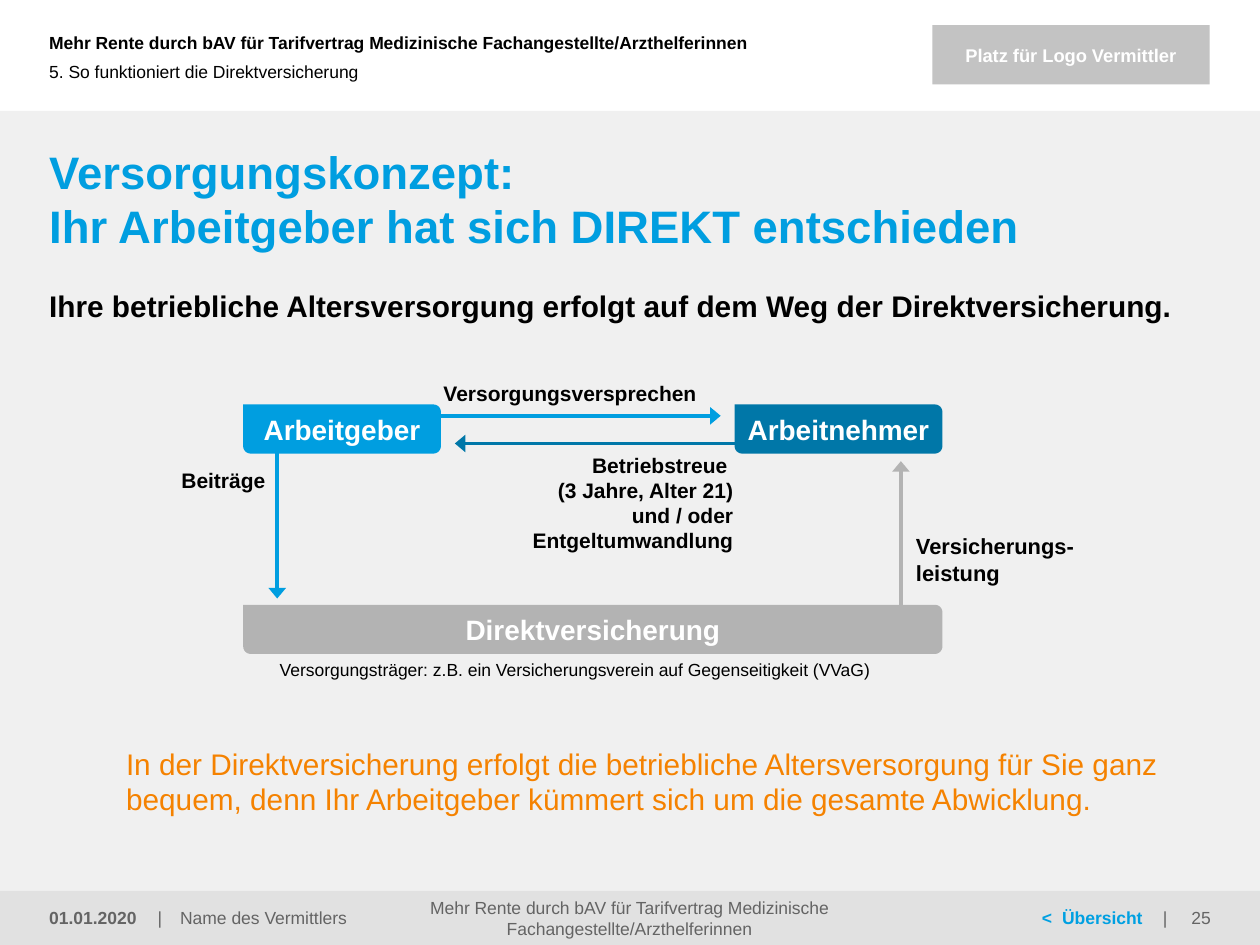
import copy
import math
from dataclasses import dataclass, field

import lxml.etree
import pptx
import pptx.dml.color
import pptx.enum.shapes
import pptx.enum.text
import pptx.oxml.ns
import pptx.util

Inches = pptx.util.Inches
Pt = pptx.util.Pt
qn = pptx.oxml.ns.qn
ALIGN = pptx.enum.text.PP_ALIGN
ANCHOR = pptx.enum.text.MSO_ANCHOR
RECTANGLE = pptx.enum.shapes.MSO_SHAPE.RECTANGLE


@dataclass(frozen=True)
class Theme:
    font: str = "Arial"
    black: str = "000000"
    white: str = "FFFFFF"
    panel: str = "F0F0F0"
    footer: str = "E1E1E1"
    footer_text: str = "646464"
    logo: str = "C3C3C3"
    blue: str = "009EE0"
    link: str = "00A0E1"
    dark_blue: str = "0077A8"
    gray: str = "B3B3B3"
    orange: str = "F58200"
    title: float = 26
    body: float = 17
    node: float = 16
    benefit: float = 12.5
    label: float = 12
    logo_text: float = 10.5
    small: float = 10


THEME = Theme()


@dataclass(frozen=True)
class Style:
    size: float
    color: str = THEME.black
    bold: bool = False
    align: ALIGN = ALIGN.LEFT
    anchor: ANCHOR = ANCHOR.TOP
    insets: tuple[float, float, float, float] = (0, 0, 0, 0)
    wrap: bool = True
    tabs: tuple[float, ...] = ()


@dataclass(frozen=True)
class Label:
    text: str
    box: tuple[float, float, float, float]
    style: Style = field(default_factory=lambda: Style(THEME.label, bold=True, wrap=False))


@dataclass(frozen=True)
class Node:
    text: str
    box: tuple[float, float, float, float]
    color: str


@dataclass(frozen=True)
class Arrow:
    start: tuple[float, float]
    end: tuple[float, float]
    color: str


def rgb(value: str) -> pptx.dml.color.RGBColor:
    return pptx.dml.color.RGBColor.from_string(value)


def assign(target, values: dict) -> None:
    for name, value in values.items():
        setattr(target, name, value)


def format_run(run, size: float, color: str, bold: bool) -> None:
    assign(run.font, {"name": THEME.font, "size": Pt(size), "bold": bold})
    run.font.color.rgb = rgb(color)


def write(shape, text: str, style: Style) -> None:
    frame = shape.text_frame
    left, top, right, bottom = map(Inches, style.insets)
    assign(frame, {
        "text": text, "word_wrap": style.wrap, "vertical_anchor": style.anchor,
        "auto_size": pptx.enum.text.MSO_AUTO_SIZE.NONE,
        "margin_left": left, "margin_top": top,
        "margin_right": right, "margin_bottom": bottom,
    })
    for paragraph in frame.paragraphs:
        paragraph.alignment = style.align
        if style.tabs:
            properties = paragraph._p.get_or_add_pPr()
            stops = lxml.etree.SubElement(properties, qn("a:tabLst"))
            for position in style.tabs:
                lxml.etree.SubElement(stops, qn("a:tab"), pos=str(Inches(position)), algn="l")
        for run in paragraph.runs:
            format_run(run, style.size, style.color, style.bold)
        for line_break in paragraph._p.findall(qn("a:br")):
            line_break.insert(0, copy.deepcopy(paragraph.runs[0]._r.rPr))


def paint(shape, color: str) -> None:
    shape.shadow.inherit = False
    shape.fill.solid()
    shape.fill.fore_color.rgb = rgb(color)
    shape.line.fill.background()


def add_panel(slide, box: tuple[float, float, float, float], color: str):
    panel = slide.shapes.add_shape(RECTANGLE, *map(Inches, box))
    paint(panel, color)
    return panel


def add_label(slide, label: Label):
    textbox = slide.shapes.add_textbox(*map(Inches, label.box))
    write(textbox, label.text, label.style)
    return textbox


def add_arrow(slide, arrow: Arrow) -> None:
    connector = slide.shapes.add_connector(
        pptx.enum.shapes.MSO_CONNECTOR.STRAIGHT, *map(Inches, arrow.start + arrow.end))
    connector.line.width = Pt(2)
    connector.line.color.rgb = rgb(arrow.color)
    lxml.etree.SubElement(connector.line._get_or_add_ln(), qn("a:tailEnd"),
                          type="triangle", w="lg", len="med")
    lxml.etree.SubElement(connector._element.spPr, qn("a:effectLst"))


def add_node(slide, node: Node, radius: float = 0.06, steps: int = 6) -> None:
    left, top, width, height = node.box
    right, bottom = left + width, top + height
    corners = [(right - radius, top + radius, -90),
               (right - radius, bottom - radius, 0),
               (left + radius, bottom - radius, 90)]
    outline = []
    for x, y, first_angle in corners:
        for step in range(steps + 1):
            angle = math.radians(first_angle + 90 * step / steps)
            outline.append((Inches(x + radius * math.cos(angle)),
                            Inches(y + radius * math.sin(angle))))
    builder = slide.shapes.build_freeform(Inches(left), Inches(top))
    builder.add_line_segments(outline, close=True)
    shape = builder.convert_to_shape()
    paint(shape, node.color)
    write(shape, node.text, Style(THEME.node, THEME.white, True, ALIGN.CENTER, ANCHOR.MIDDLE,
                                  (0.08, 0.04, 0.08, 0.04), wrap=False))


def footer_style(**changes) -> Style:
    return Style(**{"size": THEME.small, "color": THEME.footer_text,
                    "anchor": ANCHOR.MIDDLE, **changes})


PRODUCT = "Mehr Rente durch bAV für Tarifvertrag Medizinische Fachangestellte/Arzthelferinnen"
FOOTER_TOP, FOOTER_HEIGHT = 7.07, 0.43

PAGE_LABELS = [
    Label(PRODUCT, (0, 0, 6.98, 0.67),
          Style(THEME.small, bold=True, anchor=ANCHOR.MIDDLE, insets=(0.39, 0.05, 0.1, 0.05))),
    Label("5. So funktioniert die Direktversicherung", (0, 0.25, 7.15, 0.63),
          Style(THEME.small, anchor=ANCHOR.MIDDLE, insets=(0.39, 0, 0, 0))),
    Label("Ihre betriebliche Altersversorgung erfolgt auf dem Weg der Direktversicherung.",
          (0.39, 2.28, 9.22, 0.29), Style(THEME.body, bold=True)),
    Label("In der Direktversicherung erfolgt die betriebliche Altersversorgung für Sie ganz "
          "bequem, denn Ihr Arbeitgeber kümmert sich um die gesamte Abwicklung.",
          (1, 5.9, 8.61, 0.68),
          Style(THEME.body, THEME.orange, anchor=ANCHOR.MIDDLE, insets=(0, 0, 0, 0.08))),
    Label("01.01.2020", (0, FOOTER_TOP, 1.22, FOOTER_HEIGHT),
          footer_style(bold=True, insets=(0.39, 0.05, 0.1, 0.05))),
    Label("|\tName des Vermittlers", (1.25, FOOTER_TOP, 2.42, FOOTER_HEIGHT),
          footer_style(tabs=(0.18,))),
    Label(PRODUCT, (2.93, FOOTER_TOP, 4.13, FOOTER_HEIGHT), footer_style(align=ALIGN.CENTER)),
    Label("25", (9.06, FOOTER_TOP, 0.94, FOOTER_HEIGHT),
          footer_style(align=ALIGN.RIGHT, insets=(0.1, 0.05, 0.39, 0.05))),
]
OVERVIEW = Label("<\tÜbersicht", (8.27, FOOTER_TOP, 1.03, FOOTER_HEIGHT),
                 footer_style(color=THEME.link, bold=True, tabs=(0.16, 0.96)))

DIAGRAM_LABELS = [
    Label("Versorgungsversprechen", (3.52, 3.02, 2.03, 0.2)),
    Label("Betriebstreue \v(3 Jahre, Alter 21)\vund / oder\nEntgeltumwandlung",
          (3.54, 3.59, 2.28, 0.81), Style(THEME.label, bold=True, align=ALIGN.RIGHT)),
    Label("Beiträge", (1.44, 3.71, 0.67, 0.2)),
    Label("Versicherungs-\vleistung", (7.27, 4.23, 1.27, 0.42),
          Style(THEME.benefit, bold=True, wrap=False)),
    Label("Versorgungsträger: z.B. ein Versicherungsverein auf Gegenseitigkeit (VVaG)",
          (2.22, 5.23, 4.78, 0.21), Style(THEME.small)),
]
ARROWS = [
    Arrow((5.9, 3.52), (3.61, 3.52), THEME.dark_blue),
    Arrow((2.2, 3.37), (2.2, 4.75), THEME.blue),
    Arrow((3.43, 3.3), (5.72, 3.3), THEME.blue),
    Arrow((7.15, 5.03), (7.15, 3.66), THEME.gray),
]
NODES = [
    Node("Arbeitgeber", (1.93, 3.21, 1.57, 0.39), THEME.blue),
    Node("Arbeitnehmer", (5.83, 3.21, 1.65, 0.39), THEME.dark_blue),
    Node("Direktversicherung", (1.93, 4.8, 5.55, 0.39), THEME.gray),
]


def main() -> None:
    deck = pptx.Presentation()
    assign(deck, {"slide_width": Inches(10), "slide_height": Inches(7.5)})
    slide = deck.slides.add_slide(deck.slide_layouts[5])
    add_panel(slide, (0, 0.88, 10, 6.62), THEME.panel)
    add_panel(slide, (0, FOOTER_TOP, 10, FOOTER_HEIGHT), THEME.footer)
    logo_space = add_panel(slide, (7.4, 0.2, 2.2, 0.47), THEME.logo)
    write(logo_space, "Platz für Logo Vermittler",
          Style(THEME.logo_text, THEME.white, True, ALIGN.CENTER, ANCHOR.MIDDLE))

    heading = slide.shapes.title
    assign(heading, {"left": Inches(0.39), "top": Inches(1.14),
                     "width": Inches(9.22), "height": Inches(0.55)})
    write(heading, "Versorgungskonzept:\vIhr Arbeitgeber hat sich DIREKT entschieden",
          Style(THEME.title, THEME.blue, True))
    slide.shapes._spTree.append(heading._element)

    for label in PAGE_LABELS + DIAGRAM_LABELS:
        add_label(slide, label)
    overview = add_label(slide, OVERVIEW)
    separator = overview.text_frame.paragraphs[0].add_run()
    separator.text = "\t|"
    format_run(separator, THEME.small, THEME.footer_text, False)
    for arrow in ARROWS:
        add_arrow(slide, arrow)
    for node in NODES:
        add_node(slide, node)
    deck.save("out.pptx")


if __name__ == "__main__":
    main()
